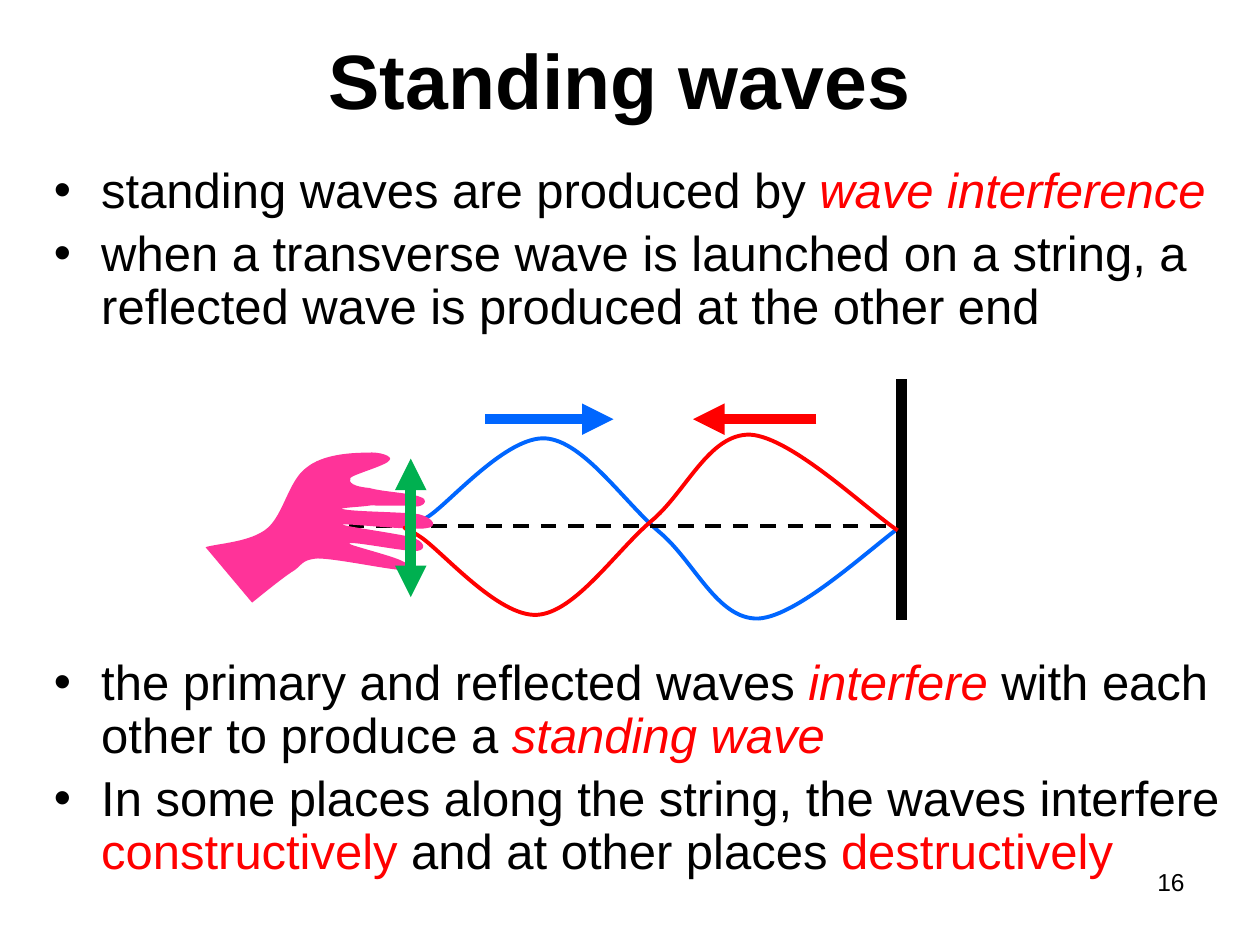
from dataclasses import dataclass
from math import cos, radians, sin
from typing import NamedTuple

from lxml import etree
from pptx import Presentation
from pptx.dml.color import RGBColor
from pptx.enum.dml import MSO_LINE
from pptx.enum.shapes import MSO_CONNECTOR
from pptx.enum.text import MSO_ANCHOR, MSO_AUTO_SIZE, PP_ALIGN
from pptx.oxml.ns import qn
from pptx.util import Emu, Inches, Pt

STRAIGHT = MSO_CONNECTOR.STRAIGHT
DASH = MSO_LINE.DASH
LEFT, CENTER, RIGHT = PP_ALIGN.LEFT, PP_ALIGN.CENTER, PP_ALIGN.RIGHT
MIDDLE = MSO_ANCHOR.MIDDLE
FONT = "Arial"
COLORS = {"black": "000000", "white": "FFFFFF", "red": "FF0000",
          "blue": "0066FF", "green": "00B050", "pink": "FF3399"}

# The page is a grid of 100 columns by 75 rows; all positions are in cells.
COLUMNS, ROWS = 100, 75
CELL = Inches(0.1)
BULLET_SIZE, BULLET_INDENT = 28, 3.75
BULLET_GAP, DIAGRAM_GAP = 5.8, 184.3
HAND_TILT, HAND_CENTER = 18.8, (25.55, 42.05)

Point = tuple[float, float]


class Span(NamedTuple):
    text: str
    color: str = "black"
    italic: bool = False


class Bullet(NamedTuple):
    spans: list[Span]
    space_before: float = BULLET_GAP


@dataclass
class Line:
    start: Point
    end: Point
    color: str
    width: float = 6
    dashed: bool = False
    head: bool = False
    tail: bool = False


BULLETS = [
    Bullet([Span("standing waves are produced by "),
            Span("wave interference", "red", True)]),
    Bullet([Span("when a transverse wave is launched on a string, "
                 "a reflected wave is produced at the other end")]),
    Bullet([Span("the primary and reflected waves "),
            Span("interfere", "red", True),
            Span(" with each other to produce a "),
            Span("standing wave", "red", True)], DIAGRAM_GAP),
    Bullet([Span("In some places along the string, the waves interfere "),
            Span("constructively", "red"),
            Span(" and at other places "),
            Span("destructively", "red")]),
]

STRING_AND_WALL = [
    Line((25.5, 41.76), (71.9, 41.76), "black", 2.25, dashed=True),
    Line((71.57, 30.1), (71.57, 49.2), "black"),
]
ARROWS = [
    Line((32.6, 36.4), (32.6, 47.4), "green", head=True, tail=True),
    Line((38.5, 33.27), (48.7, 33.27), "blue", tail=True),
    Line((64.8, 33.27), (55, 33.27), "red", tail=True),
]

# Bézier outlines: a start point, then two controls and an end per curve.
PRIMARY_WAVE = [
    (33.2, 41.4), (32.7, 41.7), (32.3, 42.1), (34, 41),
    (35.7, 39.9), (40.2, 34.6), (43.3, 34.8),
    (46.3, 35), (49.5, 39.8), (52.3, 42.2),
    (55.1, 44.5), (56.9, 49.2), (60.2, 49.1),
    (63.5, 48.9), (69.5, 43.1), (71.9, 41.5),
]
# The reflected wave mirrors the primary one, slightly shifted to the left.
REFLECTED_WAVE = [(x - 0.65, 83.6 - y) for x, y in PRIMARY_WAVE]
HAND = [
    (20, 47.9), (20.5, 47.5), (22.2, 46.1), (23.1, 45.5),
    (24, 45), (23.8, 44.5), (25.2, 44.4), (26.6, 44.4), (30.4, 45.2), (31.7, 45.3),
    (33, 45.4), (32.6, 44.9), (31.9, 44.6), (31.2, 44.2), (27.5, 43.3), (27.7, 43.2),
    (27.9, 43), (32.3, 43.9), (33.1, 43.8), (33.9, 43.7), (33.7, 43), (32.6, 42.7),
    (31.4, 42.4), (27, 41.8), (27.2, 41.7), (27.4, 41.6), (32.8, 42.2), (33.8, 42),
    (34.8, 41.9), (34.4, 41.2), (33.3, 40.9), (32.2, 40.7), (28.3, 40.7), (27.3, 40.5),
    (26.4, 40.4), (28.8, 40.3), (29.3, 40.2), (29.8, 40.1), (29.9, 40.3), (30.2, 40.2),
    (30.6, 40.2), (31.3, 40.2), (31.6, 40.2), (31.9, 40.2), (32.2, 40.2), (32.5, 40.2),
    (32.8, 40.3), (33.2, 40.3), (33.4, 40.2), (33.7, 40.1), (34, 39.7), (33.3, 39.5),
    (32.6, 39.2), (30.3, 39.1), (29.3, 38.8), (28.1, 38.7), (27.6, 38.4), (27.8, 38),
    (28.1, 37.7), (30.7, 37), (30.9, 36.6), (31.2, 36.3), (30.2, 35.9), (29.1, 36),
    (28, 36), (25.6, 36.1), (24.3, 37.2), (22.9, 38.2), (22.5, 40.9), (21.2, 42),
    (19.9, 43.1), (17.3, 43.2), (16.3, 43.5),
]


def cells(count: float) -> Emu:
    return Emu(round(count * CELL))


def rgb(name: str) -> RGBColor:
    return RGBColor.from_string(COLORS[name])


def place(box, left: float, top: float, width: float, height: float) -> None:
    box.left, box.top = cells(left), cells(top)
    box.width, box.height = cells(width), cells(height)


def add_span(para, text: str, *, size: float, color: str = "black",
             bold: bool = False, italic: bool = False) -> None:
    span = para.add_run()
    span.text = text
    font = span.font
    font.name, font.size, font.bold, font.italic = FONT, Pt(size), bold, italic
    font.color.rgb = rgb(color)


def add_text_frame(page, *area: float):
    box = page.shapes.add_textbox(*map(cells, area))
    box.text_frame.word_wrap = True
    return box.text_frame


def add_bullets(page, bullets: list[Bullet]) -> None:
    frame = add_text_frame(page, 3.3, 12.7, 94.9, 58.9)
    for index, bullet in enumerate(bullets):
        para = frame.add_paragraph() if index else frame.paragraphs[0]
        para.alignment, para.line_spacing = LEFT, 0.9
        para.space_before = Pt(bullet.space_before)
        properties = para._p.get_or_add_pPr()
        properties.set("marL", str(cells(BULLET_INDENT)))
        properties.set("indent", str(-cells(BULLET_INDENT)))
        etree.SubElement(properties, qn("a:buFont")).set("typeface", FONT)
        etree.SubElement(properties, qn("a:buChar")).set("char", "•")
        for span in bullet.spans:
            add_span(para, span.text, size=BULLET_SIZE, color=span.color,
                     italic=span.italic)


def add_line(page, line: Line) -> None:
    connector = page.shapes.add_connector(
        STRAIGHT, *map(cells, (*line.start, *line.end)))
    connector.line.color.rgb = rgb(line.color)
    connector.line.width = Pt(line.width)
    if line.dashed:
        connector.line.dash_style = DASH
    outline = connector.line._get_or_add_ln()
    for tag, wanted in (("a:headEnd", line.head), ("a:tailEnd", line.tail)):
        if wanted:
            etree.SubElement(outline, qn(tag)).set("type", "triangle")
    etree.SubElement(connector._element.spPr, qn("a:effectLst"))


def rotate(point: Point, center: Point, degrees: float) -> Point:
    angle = radians(degrees)
    x, y = point[0] - center[0], point[1] - center[1]
    return (center[0] + x * cos(angle) - y * sin(angle),
            center[1] + x * sin(angle) + y * cos(angle))


def add_curve(page, nodes: list[Point], closed: bool = False):
    """Build a polygon through all nodes, then turn each three sides into a Bézier."""
    start, *rest = [(cells(x), cells(y)) for x, y in nodes]
    builder = page.shapes.build_freeform(*start)
    builder.add_line_segments(rest, close=closed)
    shape = builder.convert_to_shape()
    shape.shadow.inherit = False
    sides = list(shape._element.iter(qn("a:lnTo")))
    for first in range(0, len(sides), 3):
        curve = etree.Element(qn("a:cubicBezTo"))
        sides[first].addprevious(curve)
        for side in sides[first:first + 3]:
            curve.append(side[0])
            side.getparent().remove(side)
    return shape


def add_wave(page, nodes: list[Point], color: str) -> None:
    wave = add_curve(page, nodes)
    wave.fill.background()
    wave.line.color.rgb = rgb(color)
    wave.line.width = Pt(2.25)


def add_hand(page) -> None:
    upright = [rotate(node, HAND_CENTER, -HAND_TILT) for node in HAND]
    hand = add_curve(page, upright, closed=True)
    hand.rotation = HAND_TILT
    hand.fill.solid()
    hand.fill.fore_color.rgb = rgb("pink")
    hand.line.fill.background()


def add_title(page, text: str) -> None:
    title = page.shapes.title
    place(title, 4.2, 0.85, 90, 10.8)
    title.fill.solid()
    title.fill.fore_color.rgb = rgb("white")
    frame = title.text_frame
    frame.auto_size, frame.vertical_anchor = MSO_AUTO_SIZE.NONE, MIDDLE
    para = frame.paragraphs[0]
    para.alignment = CENTER
    add_span(para, text, size=44, bold=True)


def add_page_number(page, number: int) -> None:
    para = add_text_frame(page, 71.7, 68.3, 23.3, 5.2).paragraphs[0]
    para.alignment = RIGHT
    add_span(para, str(number), size=14)


def main() -> None:
    deck = Presentation()
    deck.slide_width, deck.slide_height = cells(COLUMNS), cells(ROWS)
    page = deck.slides.add_slide(deck.slide_layouts.get_by_name("Title Only"))
    add_title(page, "Standing waves")
    add_bullets(page, BULLETS)
    add_wave(page, PRIMARY_WAVE, "blue")
    for line in STRING_AND_WALL:
        add_line(page, line)
    add_hand(page)
    add_wave(page, REFLECTED_WAVE, "red")
    for line in ARROWS:
        add_line(page, line)
    add_page_number(page, 16)
    deck.save("out.pptx")


if __name__ == "__main__":
    main()
